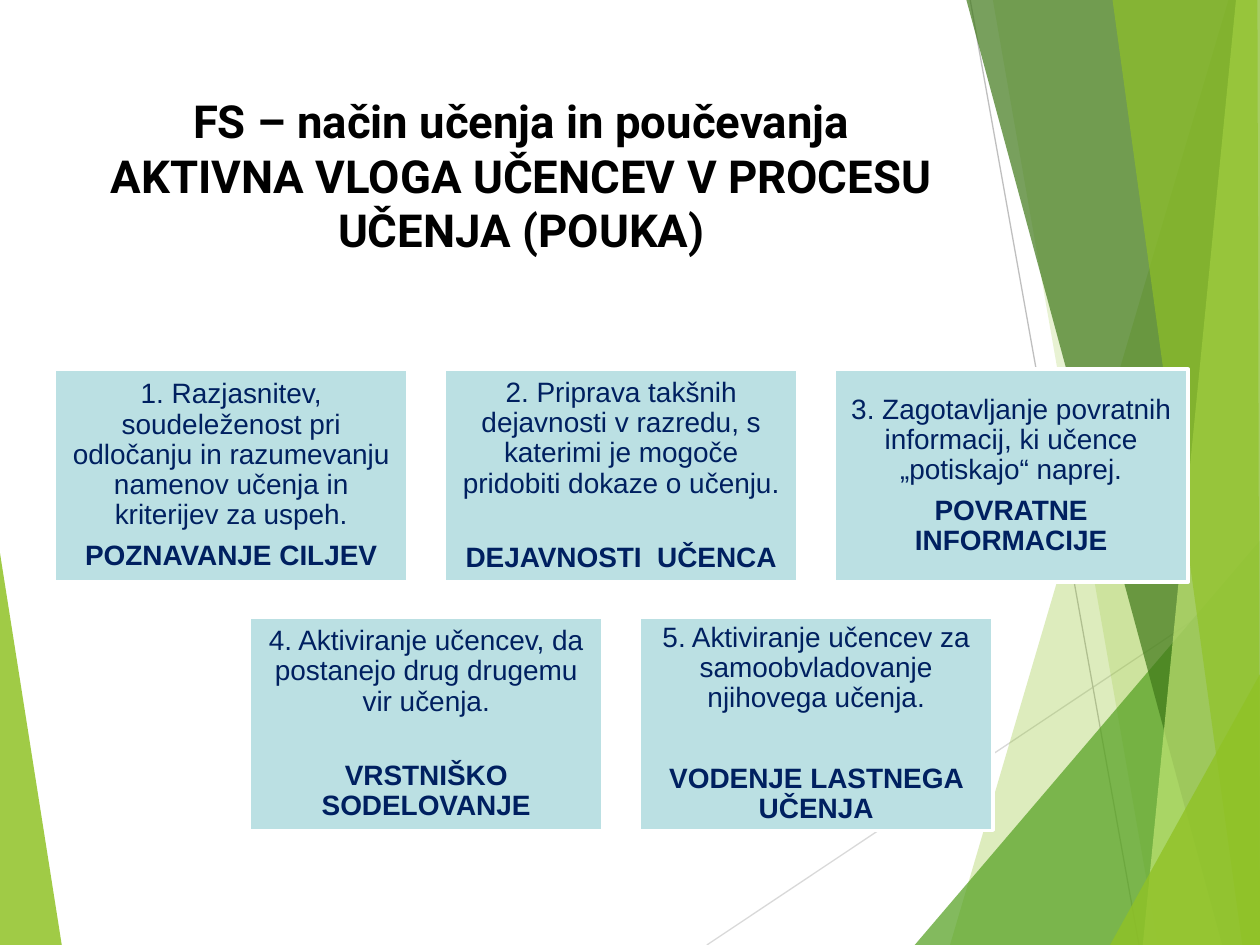
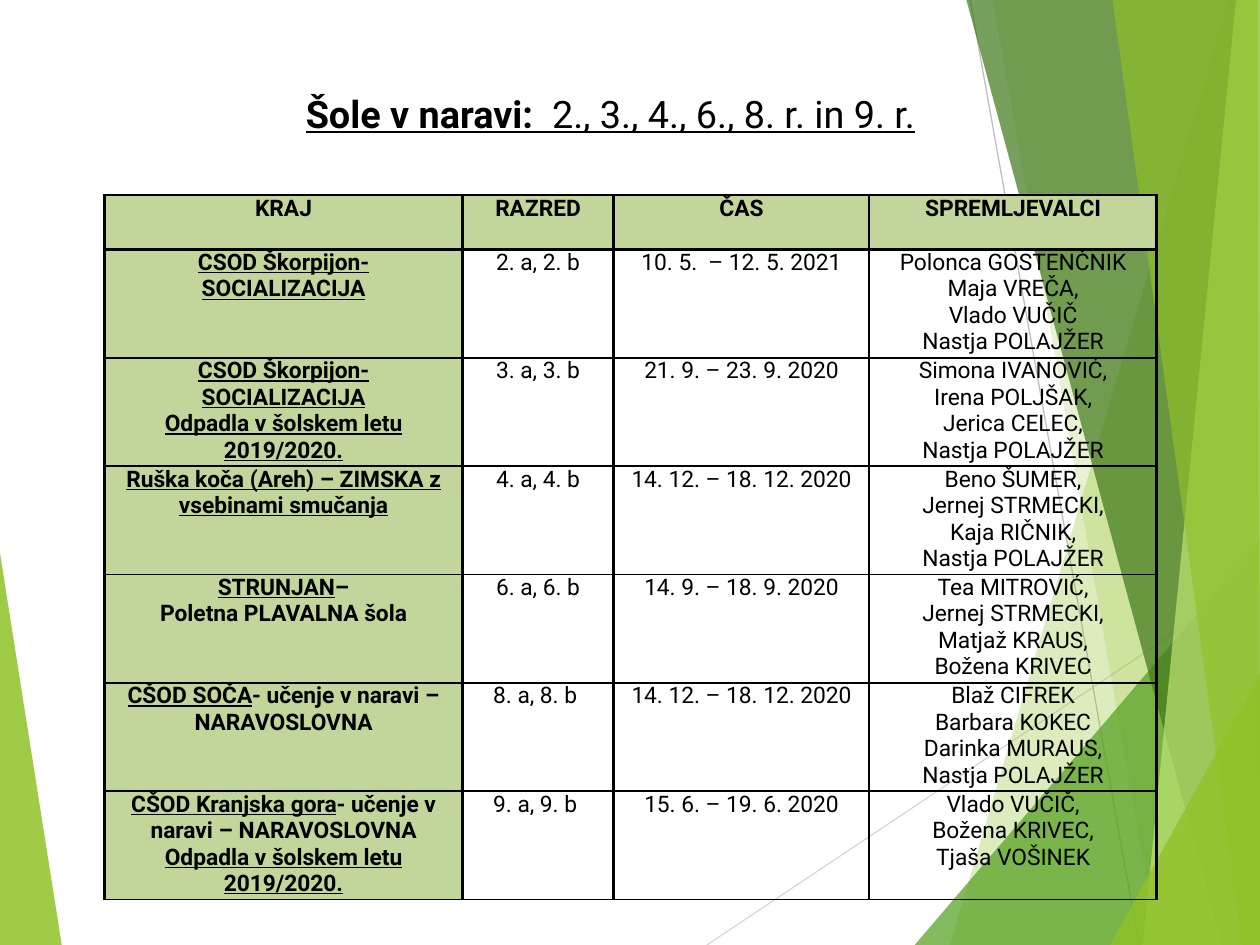
from lxml.etree import SubElement
from pptx import Presentation
from pptx.dml.color import RGBColor
from pptx.enum.shapes import MSO_CONNECTOR, MSO_SHAPE
from pptx.enum.text import MSO_ANCHOR, MSO_AUTO_SIZE, PP_ALIGN
from pptx.oxml.ns import qn
from pptx.util import Inches, Pt

BLACK, WHITE, NAVY = "000000", "FFFFFF", "002060"
LIME, GREEN, FOREST, PALE_LIME = "90C226", "54A021", "3F7819", "C0E474"
CARD_BLUE, CELL_GREEN = "BBE0E3", "C2D69B"
BOLD = {"bold": True}
UNDERLINED = {"bold": True, "underline": True}

RAYS = [((5.61, 7.5), (10, 4.57), "D9D9D9"), ((7.7, 0), (9.04, 7.5), "BFBFBF")]
LEFT_FACET = ([(0, 4.39), (0.49, 7.5), (0, 7.5)], LIME, 85)
RIGHT_FACETS = [
    ([(9.75, 0), (7.54, 7.5), (10, 7.5), (10, 0)], LIME, 30),
    ([(7.88, 0), (9.19, 7.5), (10, 7.5), (10, 0)], LIME, 20),
    ([(7.26, 7.5), (10, 4.29), (10, 7.5)], GREEN, 72),
    ([(7.67, 0), (9.7, 7.5), (10, 7.5), (10, 0)], FOREST, 70),
    ([(9.81, 0), (9.07, 7.5), (10, 7.5), (10, 0)], PALE_LIME, 70),
    ([(8.83, 0), (9.86, 7.5), (10, 7.5), (9.98, 0)], LIME, 65),
    ([(8.81, 7.5), (10, 5.35), (10, 7.5)], LIME, 80),
]

STRATEGY_ROWS = [
    [
        ("1. Razjasnitev, soudeleženost pri odločanju in razumevanju namenov učenja "
         "in kriterijev za uspeh.", "POZNAVANJE CILJEV", 6),
        ("2. Priprava takšnih dejavnosti v razredu, s katerimi je mogoče pridobiti "
         "dokaze o učenju.", "DEJAVNOSTI  UČENCA", 25),
        ("3. Zagotavljanje povratnih informacij, ki učence „potiskajo“ naprej.",
         "POVRATNE INFORMACIJE", 6),
    ],
    [
        ("4. Aktiviranje učencev, da postanejo drug drugemu vir učenja.",
         "VRSTNIŠKO SODELOVANJE", 25),
        ("5. Aktiviranje učencev za samoobvladovanje njihovega učenja.",
         "VODENJE LASTNEGA UČENJA", 29),
    ],
]

CANCELLED = [("Odpadla v šolskem letu 2019/2020.", UNDERLINED)]
SOCIALISATION = [[("CSOD Škorpijon-", UNDERLINED)], [("SOCIALIZACIJA", UNDERLINED)]]
SCIENCE = "- učenje v naravi – NARAVOSLOVNA"
HEADINGS = ["KRAJ", "RAZRED", "ČAS", "SPREMLJEVALCI"]
TRIPS = [
    (SOCIALISATION, "2. a, 2. b", "10. 5.  – 12. 5. 2021",
     ["Polonca GOSTENČNIK", "Maja VREČA,", "Vlado VUČIČ", "Nastja POLAJŽER"]),
    (SOCIALISATION + [CANCELLED], "3. a, 3. b", "21. 9. – 23. 9. 2020",
     ["Simona IVANOVIĆ,", "Irena POLJŠAK,", "Jerica CELEC,", "Nastja POLAJŽER"]),
    ([[("Ruška koča (Areh) – ZIMSKA z vsebinami smučanja", UNDERLINED)]],
     "4. a, 4. b", "14. 12. – 18. 12. 2020",
     ["Beno ŠUMER,", "Jernej STRMECKI,", "Kaja RIČNIK,", "Nastja POLAJŽER"]),
    ([[("STRUNJAN", UNDERLINED), "–"], "Poletna PLAVALNA šola"],
     "6. a, 6. b", "14. 9. – 18. 9. 2020",
     ["Tea MITROVIĆ,", "Jernej STRMECKI,", "Matjaž KRAUS,", "Božena KRIVEC"]),
    ([[("CŠOD SOČA", UNDERLINED), SCIENCE]], "8. a, 8. b ", "14. 12. – 18. 12. 2020",
     ["Blaž CIFREK", "Barbara KOKEC", "Darinka MURAUS,", "Nastja POLAJŽER"]),
    ([[("CŠOD Kranjska gora", UNDERLINED), SCIENCE], CANCELLED],
     "9. a, 9. b ", "15. 6. – 19. 6. 2020",
     ["Vlado VUČIČ,", "Božena KRIVEC,", "Tjaša VOŠINEK"]),
]


def rgb(hex_color):
    """Turn a hex string into a colour."""
    return RGBColor.from_string(hex_color)


def write(frame, paragraphs, font="Roboto", size=13, color=BLACK, bold=False,
          line_spacing=None, gap=0):
    """Fill a text frame with centred paragraphs, each a string or a list of runs."""
    frame.word_wrap = True
    for index, runs in enumerate(paragraphs):
        paragraph = frame.add_paragraph() if index else frame.paragraphs[0]
        paragraph.alignment = PP_ALIGN.CENTER
        paragraph.line_spacing = line_spacing
        paragraph.space_before = Pt(gap if index else 0)
        for part in [runs] if isinstance(runs, str) else runs:
            text, changes = (part, {}) if isinstance(part, str) else part
            run = paragraph.add_run()
            run.text = text
            run.font.name, run.font.size = font, Pt(size)
            run.font.color.rgb = rgb(color)
            run.font.bold = changes.get("bold", bold)
            run.font.underline = changes.get("underline", False)


def draw_facet(slide, points, color, opacity):
    """Draw one translucent polygon of the background."""
    corners = [(Inches(x), Inches(y)) for x, y in points]
    builder = slide.shapes.build_freeform(*corners[0], scale=1.0)
    builder.add_line_segments(corners[1:], close=True)
    facet = builder.convert_to_shape()
    facet.shadow.inherit = False
    facet.fill.solid()
    facet.fill.fore_color.rgb = rgb(color)
    facet.line.fill.background()
    fill_color = facet._element.spPr.find(qn("a:solidFill"))[0]
    SubElement(fill_color, qn("a:alpha")).set("val", str(opacity * 1000))
    return facet


def draw_ray(slide, start, end, color):
    """Draw one thin line of the background."""
    ray = slide.shapes.add_connector(
        MSO_CONNECTOR.STRAIGHT, *[Inches(value) for value in start + end])
    ray.line.color.rgb = rgb(color)
    ray.line.width = Pt(0.75)
    SubElement(ray._element.spPr, qn("a:effectLst"))
    return ray


def build_master_background(master, slide):
    """Draw the facets and rays on a slide and move them behind the master's parts."""
    parts = [draw_facet(slide, *LEFT_FACET)]
    parts += [draw_ray(slide, *ray) for ray in RAYS]
    parts += [draw_facet(slide, *facet) for facet in RIGHT_FACETS]
    for index, part in enumerate(parts):
        part._element.xpath(".//p:cNvPr")[0].set("id", str(100 + index))
        master.shapes._spTree.insert(2 + index, part._element)


def place_title(slide, paragraphs, box, anchor, **text_format):
    """Place the title placeholder in the box and fill it."""
    title = slide.shapes.title
    title.left, title.top, title.width, title.height = [Inches(value) for value in box]
    title.text_frame.auto_size = MSO_AUTO_SIZE.NONE
    title.text_frame.vertical_anchor = anchor
    write(title.text_frame, paragraphs, **text_format)


def add_card(slide, strategy, box):
    """Add one strategy card with its description and its key phrase."""
    description, key_phrase, gap = strategy
    card = slide.shapes.add_shape(MSO_SHAPE.RECTANGLE, *[Inches(value) for value in box])
    card.shadow.inherit = False
    card.fill.solid()
    card.fill.fore_color.rgb = rgb(CARD_BLUE)
    card.line.color.rgb = rgb(WHITE)
    card.line.width = Pt(2)
    frame = card.text_frame
    frame.margin_left = frame.margin_right = Inches(0.07)
    frame.margin_top = frame.margin_bottom = Inches(0.07)
    frame.vertical_anchor = MSO_ANCHOR.MIDDLE
    write(frame, [description, [(key_phrase, BOLD)]], font="Arial", size=16,
          color=NAVY, line_spacing=0.9, gap=gap)


def add_card_grid(slide, rows, box, card_width=2.81, card_height=1.69):
    """Spread the rows of cards over the box, each row centred."""
    left, top, width, height = box
    columns = max(len(row) for row in rows)
    gap = (width - columns * card_width) / (columns - 1)
    row_step = (height - card_height) / (len(rows) - 1)
    for row_index, row in enumerate(rows):
        row_width = len(row) * (card_width + gap) - gap
        row_left = left + (width - row_width) / 2
        for column, strategy in enumerate(row):
            add_card(slide, strategy, (row_left + column * (card_width + gap),
                                       top + row_index * row_step,
                                       card_width, card_height))


def set_borders(cell, widths):
    """Give the cell black borders; widths holds points for left, right, top, bottom."""
    properties = cell._tc.get_or_add_tcPr()
    for index, (side, width) in enumerate(zip(("lnL", "lnR", "lnT", "lnB"), widths)):
        border = properties.makeelement(qn(f"a:{side}"), {"w": str(Pt(width))})
        fill = SubElement(border, qn("a:solidFill"))
        SubElement(fill, qn("a:srgbClr")).set("val", BLACK)
        properties.insert(index, border)


def fill_cell(cell, paragraphs, shaded, borders):
    """Write and format one table cell; shaded cells are bold."""
    cell.margin_left = cell.margin_right = Inches(0.04)
    cell.margin_top = cell.margin_bottom = 0
    cell.vertical_anchor = MSO_ANCHOR.TOP
    if shaded:
        cell.fill.solid()
        cell.fill.fore_color.rgb = rgb(CELL_GREEN)
    else:
        cell.fill.background()
    set_borders(cell, borders)
    write(cell.text_frame, paragraphs, bold=shaded)


def add_trip_table(slide, box, column_widths=(2.84, 1.2, 2.03, 2.28),
                   header_height=0.43):
    """Add the table of trips inside the box."""
    rows = [[[heading] for heading in HEADINGS]]
    rows += [[place, [grade], [dates], staff] for place, grade, dates, staff in TRIPS]
    table = slide.shapes.add_table(
        len(rows), len(HEADINGS), *[Inches(value) for value in box]).table
    table.first_row = table.horz_banding = False
    for column, width in zip(table.columns, column_widths):
        column.width = Inches(width)
    trip_height = (box[3] - header_height) / len(TRIPS)
    for row_index, row in enumerate(rows):
        table.rows[row_index].height = Inches(trip_height if row_index else header_height)
        top = 1.5 if row_index < 3 else 1
        bottom = 1.5 if row_index < 2 else 1
        for column_index, paragraphs in enumerate(row):
            fill_cell(table.cell(row_index, column_index), paragraphs,
                      shaded=row_index == 0 or column_index == 0,
                      borders=(1.5, 1.5, top, bottom))


def build_strategies_slide(slide):
    """Build the slide with the five strategies."""
    place_title(slide, ["FS – način učenja in poučevanja",
                        "AKTIVNA VLOGA UČENCEV V PROCESU UČENJA (POUKA)"],
                (0.67, 0.67, 6.94, 1.44), MSO_ANCHOR.MIDDLE, size=26, bold=True)
    add_card_grid(slide, STRATEGY_ROWS, (0.43, 2.93, 9, 3.66))


def build_trips_slide(slide):
    """Build the slide with the table of outdoor schools."""
    place_title(slide, [[("Šole v naravi:", UNDERLINED),
                         ("  2., 3., 4., 6., 8. r. in 9. r.", {"underline": True})]],
                (0.67, 0.67, 8.35, 0.64), MSO_ANCHOR.TOP, size=21.6)
    add_trip_table(slide, (0.83, 1.55, 8.35, 5.59))


def main():
    """Build and save the presentation."""
    deck = Presentation()
    deck.slide_width, deck.slide_height = Inches(10), Inches(7.5)
    title_only = deck.slide_layouts[5]
    strategies, trips = [deck.slides.add_slide(title_only) for _ in range(2)]
    build_master_background(deck.slide_master, strategies)
    build_strategies_slide(strategies)
    build_trips_slide(trips)
    deck.save("out.pptx")


if __name__ == "__main__":
    main()
